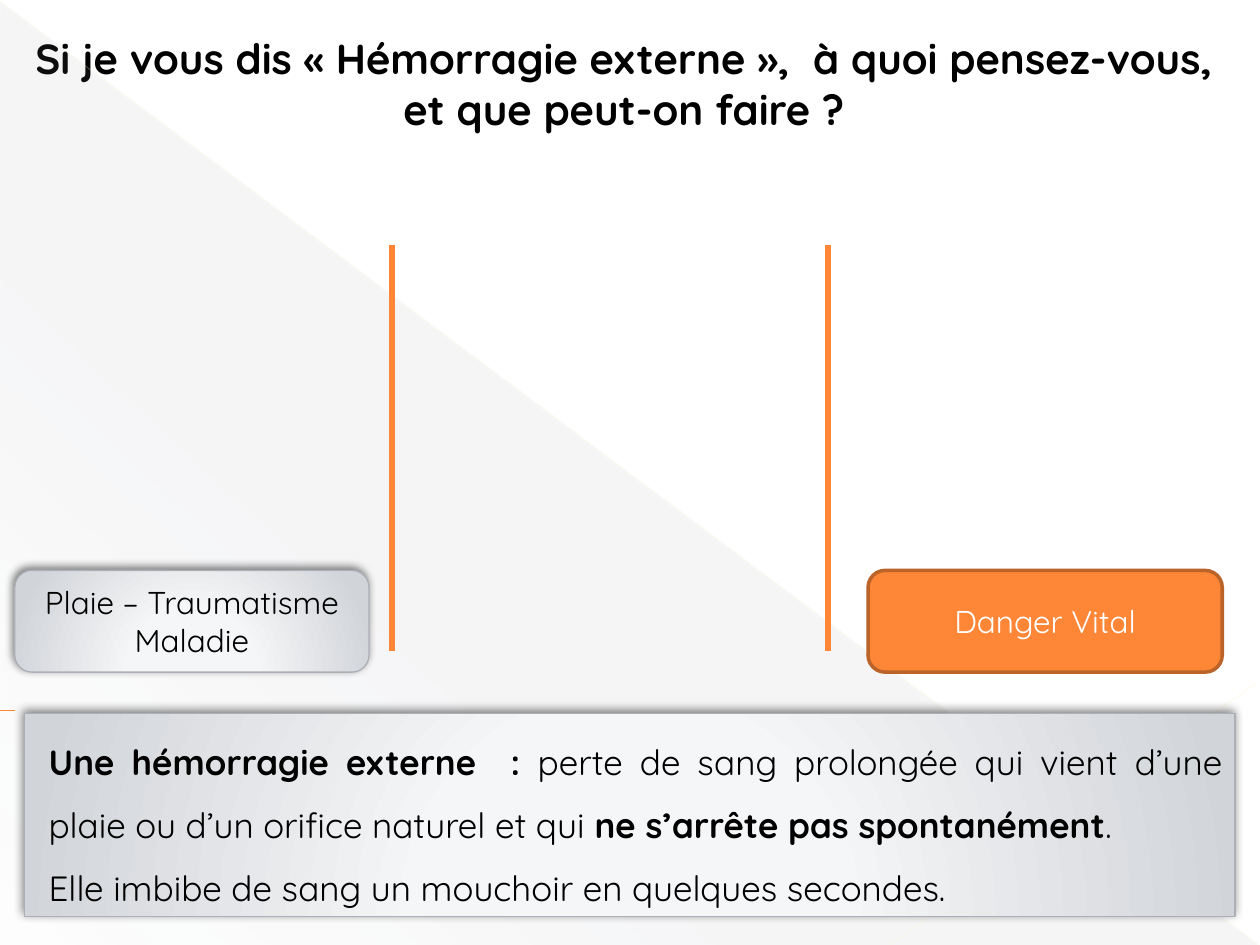
import pptx
import pptx.dml.color
import pptx.enum.shapes
import pptx.enum.text
import pptx.oxml
import pptx.oxml.ns
import pptx.util

Cm = pptx.util.Cm
Pt = pptx.util.Pt
qn = pptx.oxml.ns.qn
SHAPE = pptx.enum.shapes.MSO_SHAPE
ALIGN = pptx.enum.text.PP_ALIGN
ANCHOR = pptx.enum.text.MSO_ANCHOR

FONT = "Quicksand"
ORANGE = "FE8637"
LINE_ORANGE = "FF8636"
SILVER = [(0, "F8F8F9", 100), (34, "F5F6F7", 100), (100, "D1D4D9", 100)]
VEIL = [(0, "969DAB", 10), (70, "969DAB", 8), (100, "969DAB", 1)]
GLOW = '<a:path path="circle"><a:fillToRect l="50000" t="155000" r="50000" b="-55000"/></a:path>'
SLANT = '<a:lin ang="7980000" scaled="0"/>'


def rgb(color):
    return pptx.dml.color.RGBColor.from_string(color)


def xml(tag, body, attrs=""):
    return pptx.oxml.parse_xml(
        f'<a:{tag} {pptx.oxml.ns.nsdecls("a")} {attrs}>{body}</a:{tag}>')


def color_xml(color, alpha):
    return f'<a:srgbClr val="{color}"><a:alpha val="{alpha * 1000}"/></a:srgbClr>'


def add_text(p, text, size=18, color="000000", bold=False, align=None):
    r = p.add_run()
    r.text = text
    r.font.name = FONT
    r.font.size = Pt(size)
    r.font.bold = bold
    r.font.color.rgb = rgb(color)
    if align is not None:
        p.alignment = align


def add_box(s, kind, box, line=None, width=0.75, anchor=ANCHOR.MIDDLE):
    sp = s.shapes.add_shape(kind, *map(Cm, box))
    sp.shadow.inherit = False
    sp.fill.background()
    if line:
        sp.line.color.rgb = rgb(line)
        sp.line.width = Pt(width)
    else:
        sp.line.fill.background()
    sp.text_frame.word_wrap = True
    sp.text_frame.vertical_anchor = anchor
    return sp


def set_gradient(sp, stops, direction):
    gs = "".join(f'<a:gs pos="{pos * 1000}">{color_xml(color, alpha)}</a:gs>'
                 for pos, color, alpha in stops)
    pr = sp._element.spPr
    pr.replace(pr.find(qn("a:noFill")), xml("gradFill", f"<a:gsLst>{gs}</a:gsLst>{direction}"))


def add_silver_box(s, kind, box, anchor=ANCHOR.MIDDLE):
    sp = add_box(s, kind, box, line="ACB0B6", anchor=anchor)
    set_gradient(sp, SILVER, GLOW)
    effects = sp._element.spPr.find(qn("a:effectLst"))
    effects.append(xml("outerShdw", color_xml("000000", 50),
                       f'blurRad="{Pt(5)}" dist="{Pt(2)}" dir="14700000" rotWithShape="0"'))
    return sp


def add_line(s, start, end, color=LINE_ORANGE, width=0.75, alpha=100):
    cn = s.shapes.add_connector(pptx.enum.shapes.MSO_CONNECTOR.STRAIGHT,
                                *map(Cm, start + end))
    cn.line.color.rgb = rgb(color)
    cn.line.width = Pt(width)
    if alpha < 100:
        clr = cn.line._ln.find(".//" + qn("a:srgbClr"))
        clr.append(xml("alpha", "", f'val="{alpha * 1000}"'))
    cn._element.spPr.append(xml("effectLst", ""))


def add_backdrop(s, x, y, w, h):
    triangle = add_box(s, SHAPE.RIGHT_TRIANGLE, (x, y, w, h))
    set_gradient(triangle, VEIL, SLANT)
    add_line(s, (x, y), (x + w, y + h), "FFF8D1", 0.39, 35)
    add_line(s, (x + w, y + 13.7), (x + 17.95, y + h), "FFF9D5", 0.47, 45)
    add_line(s, (x + 0.3, y + 14.28), (x, y + 14.28))


def add_title(s, x, y, w, h):
    sp = s.shapes.title
    sp.left, sp.top, sp.width, sp.height = map(Cm, (x, y, w, h))
    tf = sp.text_frame
    tf.word_wrap = True
    tf.auto_size = pptx.enum.text.MSO_AUTO_SIZE.NONE
    tf.vertical_anchor = ANCHOR.TOP
    add_text(tf.paragraphs[0],
             "Si je vous dis « Hémorragie externe »,  à quoi pensez-vous, et que peut-on faire ?",
             size=24, bold=True, align=ALIGN.CENTER)


def add_columns(s, x, y, w, h):
    rule_bottom = y + 8.2
    for offset in (7.6, 16.39):
        add_line(s, (x + offset, y), (x + offset, rule_bottom), width=3)

    label_w, label_h = 7.14, 2.05
    top = y + h - label_h
    kind = SHAPE.FLOWCHART_ALTERNATE_PROCESS
    cause = add_silver_box(s, kind, (x, top, label_w, label_h))
    add_text(cause.text_frame.paragraphs[0], "Plaie – Traumatisme Maladie", align=ALIGN.CENTER)

    risk = add_box(s, kind, (x + w - label_w, top, label_w, label_h), line="BC6329", width=2)
    risk.fill.solid()
    risk.fill.fore_color.rgb = rgb(ORANGE)
    add_text(risk.text_frame.paragraphs[0], "Danger Vital", color="FFFFFF", align=ALIGN.CENTER)


def add_definition(s, x, y, w, h):
    sp = add_silver_box(s, SHAPE.RECTANGLE, (x, y, w, h), anchor=ANCHOR.TOP)
    tf = sp.text_frame
    paragraphs = [
        [("Une hémorragie externe  : ", True),
         ("perte de sang prolongée qui vient d’une plaie ou d’un orifice naturel et qui ", False),
         ("ne s’arrête pas spontanément", True),
         (".", False)],
        [("Elle imbibe de sang un mouchoir en quelques secondes.", False)],
    ]
    for i, runs in enumerate(paragraphs):
        p = tf.paragraphs[0] if i == 0 else tf.add_paragraph()
        p.line_spacing = 1.5
        p._p.get_or_add_pPr().set("marL", str(Cm(0.23)))
        for text, bold in runs:
            add_text(p, text, size=20, bold=bold, align=ALIGN.JUSTIFY)


def main():
    prs = pptx.Presentation()
    prs.slide_width, prs.slide_height = Cm(25.4), Cm(19.05)
    s = prs.slides.add_slide(prs.slide_layouts[5])
    s.background.fill.solid()
    s.background.fill.fore_color.rgb = rgb("FFFFFF")
    add_backdrop(s, 0, 0.04, 25.36, 19)
    add_title(s, -0.05, 0.53, 25.25, 2.31)
    add_columns(s, 0.3, 4.93, 24.34, 8.62)
    add_definition(s, 0.5, 14.38, 24.4, 4.1)
    tree = s.shapes._spTree
    tree.remove(s.shapes.title._element) if s.shapes.title is None else None
    prs.save("out.pptx")


if __name__ == "__main__":
    main()
